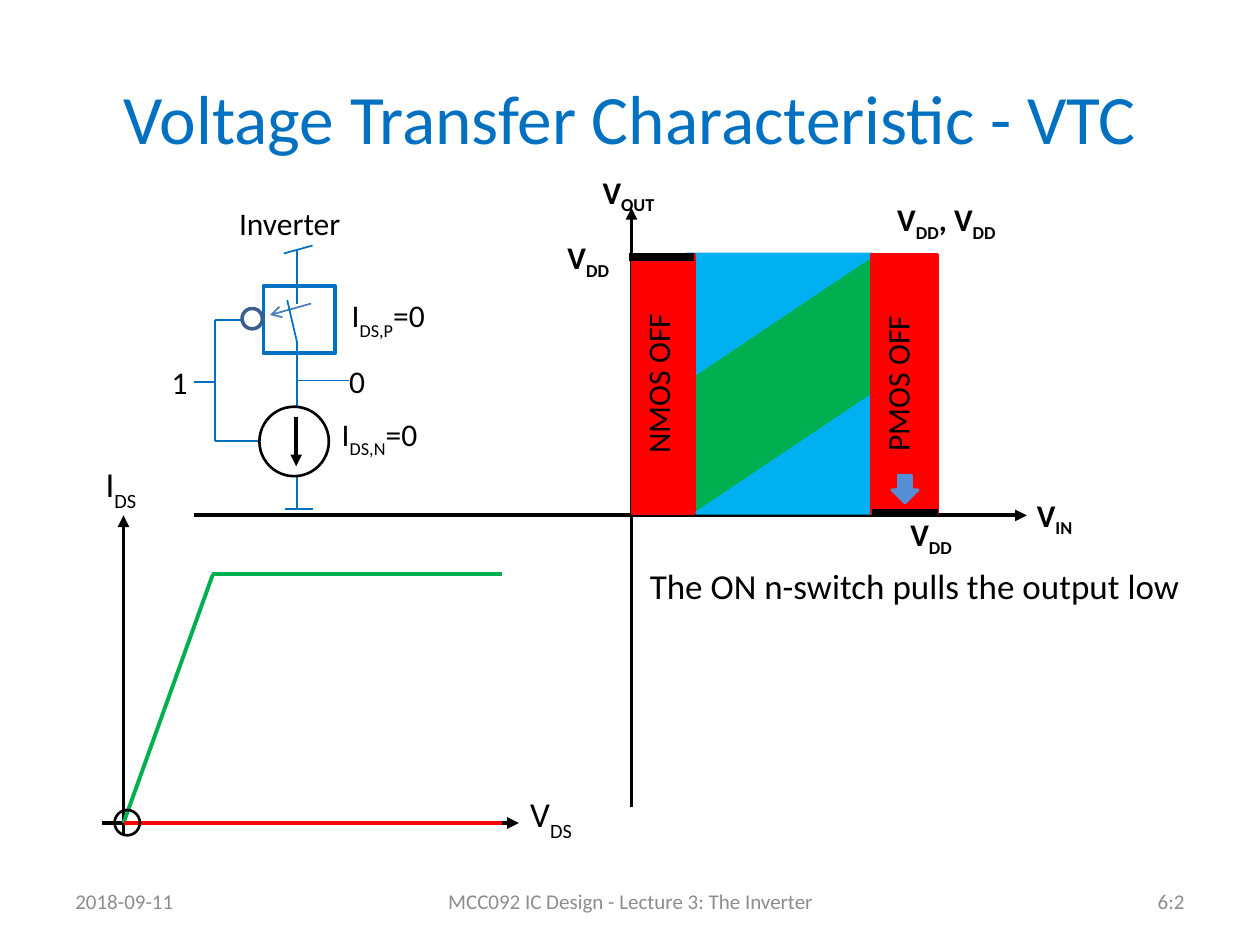
from dataclasses import dataclass

from lxml import etree
from pptx import Presentation
from pptx import util as u
from pptx.dml.color import RGBColor
from pptx.enum import shapes, text
from pptx.oxml import ns

SHAPE = shapes.MSO_SHAPE
LEFT, CENTER, RIGHT = text.PP_ALIGN.LEFT, text.PP_ALIGN.CENTER, text.PP_ALIGN.RIGHT
TOP, MIDDLE = text.MSO_ANCHOR.TOP, text.MSO_ANCHOR.MIDDLE


@dataclass(frozen=True)
class Theme:
    """Colours, type sizes and line widths of the slide."""
    font: str = "Calibri"
    black: str = "000000"
    white: str = "FFFFFF"
    blue: str = "0070C0"
    grey: str = "8C8C8C"
    red: str = "FF0000"
    green: str = "00B050"
    sky: str = "00B0F0"
    bubble: str = "3A5F8C"
    gate: str = "4B7EBC"
    pointer: str = "558ED5"
    title: float = 39.6
    large: float = 20
    label: float = 18
    footer: float = 12
    thin: float = 1
    medium: float = 1.5
    outline: float = 2
    axis: float = 2.25
    bar: float = 4.5


T = Theme()


def write(tf, markup, size, color=T.black, bold=False, align=LEFT, drop=-25):
    """Fill a text frame; every second part between bars is a subscript."""
    p = tf.paragraphs[0]
    p.alignment = align
    p.font.name, p.font.size, p.font.bold = T.font, u.Pt(size), bold
    p.font.color.rgb = RGBColor.from_string(color)
    for i, part in enumerate(markup.split("|")):
        r = p.add_run()
        r.text = part
        if i % 2:
            r._r.get_or_add_rPr().set("baseline", str(drop * 1000))
    return p


def add_text(s, box, markup, size=T.label, anchor=TOP, inset=(0.25, 0.13), wrap=True, **style):
    """Add a text box and return its paragraph."""
    tf = s.shapes.add_textbox(*map(u.Cm, box)).text_frame
    tf.word_wrap, tf.vertical_anchor = wrap, anchor
    tf.margin_left = tf.margin_right = u.Cm(inset[0])
    tf.margin_top = tf.margin_bottom = u.Cm(inset[1])
    return write(tf, markup, size, **style)


def paint(sp, fill, line, width):
    """Set fill and outline of a shape and drop its shadow."""
    sp.shadow.inherit = False
    if fill:
        sp.fill.solid()
        sp.fill.fore_color.rgb = RGBColor.from_string(fill)
    else:
        sp.fill.background()
    sp.line.color.rgb = RGBColor.from_string(line)
    sp.line.width = u.Pt(width)
    return sp


def add_shape(s, kind, box, fill, line, width=T.outline):
    """Add a painted preset shape."""
    return paint(s.shapes.add_shape(kind, *map(u.Cm, box)), fill, line, width)


def add_off_region(s, box, label):
    """Add a red region with text that reads upwards."""
    tf = add_shape(s, SHAPE.RECTANGLE, box, T.red, T.red).text_frame
    tf._txBody.bodyPr.set("vert", "vert270")
    tf.vertical_anchor = TOP
    write(tf, label, T.label, align=CENTER)


def add_triangle(s, points):
    """Add a sky blue triangle."""
    start, *rest = [tuple(map(u.Cm, pt)) for pt in points]
    builder = s.shapes.build_freeform(*start)
    builder.add_line_segments(rest, close=True)
    paint(builder.convert_to_shape(), T.sky, T.sky, T.outline)


def add_line(s, ends, color=T.blue, width=T.thin, head=None):
    """Add a straight line, with an arrowhead at its end if named."""
    c = s.shapes.add_connector(shapes.MSO_CONNECTOR.STRAIGHT, *map(u.Cm, ends))
    c.line.color.rgb = RGBColor.from_string(color)
    c.line.width = u.Pt(width)
    if head:
        etree.SubElement(c.line._get_or_add_ln(), ns.qn("a:tailEnd"), type=head)
    etree.SubElement(c._element.spPr, ns.qn("a:effectLst"))


def add_axis(s, *ends):
    """Add a black line that ends in a triangle."""
    add_line(s, ends, T.black, T.axis, "triangle")


def add_frame_text(s):
    """Add the title and the footer line."""
    add_text(s, (1.27, 0.76, 22.86, 3.18), "Voltage Transfer Characteristic - VTC",
             T.title, MIDDLE, color=T.blue, align=CENTER)
    for x, w, words, align in (
        (1.27, 5.92, "2018-09-11", LEFT),
        (8.69, 8.05, "MCC092 IC Design - Lecture 3: The Inverter", CENTER),
        (18.21, 5.92, "6:2", RIGHT),
    ):
        add_text(s, (x, 17.65, w, 1.02), words, T.footer, MIDDLE, color=T.grey, align=align)


def add_transfer_plot(s):
    """Add the VOUT against VIN plane with its regions."""
    top, height = 5.13, 5.21
    bottom = top + height
    add_axis(s, 12.73, 16.26, 12.73, 4.19)
    add_axis(s, 3.91, 10.39, 20.7, 10.39)
    for x, y, w, label in (
        (20.42, 9.86, 1.68, "V|IN"),
        (11.63, 3.35, 2.08, "V|OUT"),
        (17.93, 10.26, 1.68, "V|DD"),
        (11.02, 4.67, 1.68, "V|DD"),
        (17.53, 3.91, 3.1, "V|DD|, V|DD"),
    ):
        add_text(s, (x, y, w, 1.02), label, bold=True, align=CENTER)
    add_shape(s, SHAPE.RECTANGLE, (13.72, top, 4.22, height), T.green, T.green, T.medium)
    add_triangle(s, [(17.6, top), (13.84, 7.65), (13.84, top)])
    add_off_region(s, (12.75, top, 1.24, height), "NMOS OFF")
    add_triangle(s, [(14.05, bottom), (17.81, 7.82), (17.81, bottom)])
    add_off_region(s, (17.58, top, 1.32, height), "PMOS OFF")
    add_line(s, (14, 5.18, 12.67, 5.18), T.black, T.bar)
    add_line(s, (18.9, bottom, 17.58, bottom), T.black, T.bar)
    add_shape(s, SHAPE.DOWN_ARROW, (17.98, 9.58, 0.53, 0.56), T.pointer, T.pointer, T.medium)
    p = add_text(s, (12.85, 11.25, 11.66, 5.66), "The ON n-switch pulls the output low", T.large)
    p.space_before = u.Pt(4)


def add_inverter(s):
    """Add the inverter circuit with its switch and current source."""
    mid, left = 5.99, 4.34
    for ends in (
        (left, 8.89, 5.31, 8.89), (mid, 10.24, mid, 7.44),
        (left, 6.45, 5.56, 6.45), (mid, 7.82, mid, 5.03),
        (left, 8.89, left, 6.45), (3.91, 7.7, left, 7.7),
        (mid, 7.67, 7.04, 7.67), (5.74, 10.26, 6.3, 10.26),
        (5.72, 5.11, 6.3, 4.95),
    ):
        add_line(s, ends)
    add_shape(s, SHAPE.RECTANGLE, (5.31, 5.77, 1.45, 1.35), T.white, T.blue)
    add_shape(s, SHAPE.OVAL, (4.88, 6.22, 0.41, 0.41), T.white, T.bubble)
    add_line(s, (6.27, 6.12, 5.44, 6.35), T.gate, head="arrow")
    for ends in ((mid, 7.47, mid, 6.88), (mid, 6.12, mid, 5.54), (mid, 6.91, 5.79, 6.05)):
        add_line(s, ends)
    add_text(s, (7.04, 7.16, 2.01, 1.02), "0", inset=(0, 0.13))
    add_text(s, (3, 7.19, 1.24, 1.02), "1", align=CENTER)
    add_text(s, (4.57, 3.99, 2.59, 1.02), "Inverter", wrap=False)
    add_text(s, (6.71, 8.28, 2.46, 1.45), "I|DS,N|=0", inset=(0.18, 0.08), drop=-30)
    add_text(s, (6.91, 5.89, 2.46, 1.45), "I|DS,P|=0", inset=(0.18, 0.08), drop=-30)
    add_shape(s, SHAPE.OVAL, (5.23, 8.2, 1.4, 1.4), T.white, T.black, T.medium)
    add_axis(s, 5.97, 8.41, 5.97, 9.4)


def add_current_plot(s):
    """Add the IDS against VDS plot with both device curves."""
    x0, y0, x1, level = 2.49, 16.59, 10.11, 11.58
    add_axis(s, x0, 16.84, x0, 10.39)
    add_axis(s, 2.06, y0, 10.46, y0)
    add_text(s, (10.54, 15.9, 1.78, 1.3), "V|DS", T.large, inset=(0.15, 0.08), drop=-30)
    add_text(s, (1.98, 9.25, 1.63, 1.98), "I|DS", T.large, inset=(0.15, 0.08), drop=-30)
    add_line(s, (4.29, level, x0, y0), T.green, T.axis)
    add_line(s, (x1, level, 4.27, level), T.green, T.axis)
    add_line(s, (x0, y0, x1, y0), T.red, T.axis)
    add_shape(s, SHAPE.OVAL, (2.31, 16.33, 0.51, 0.51), None, T.black, T.medium)


def main():
    """Build the slide and save it."""
    prs = Presentation()
    prs.slide_width, prs.slide_height = u.Cm(25.4), u.Cm(19.05)
    s = prs.slides.add_slide(prs.slide_layouts[6])
    add_frame_text(s)
    add_transfer_plot(s)
    add_inverter(s)
    add_current_plot(s)
    prs.save("out.pptx")


if __name__ == "__main__":
    main()
